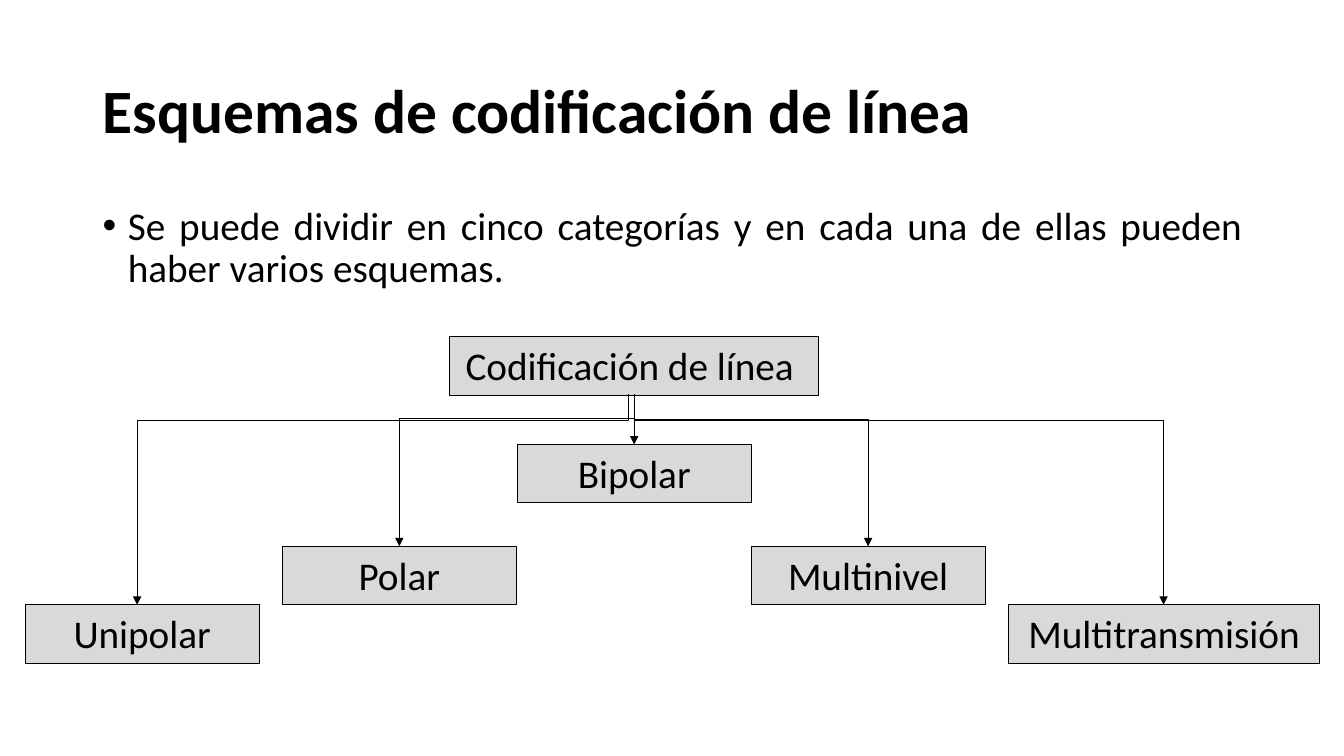
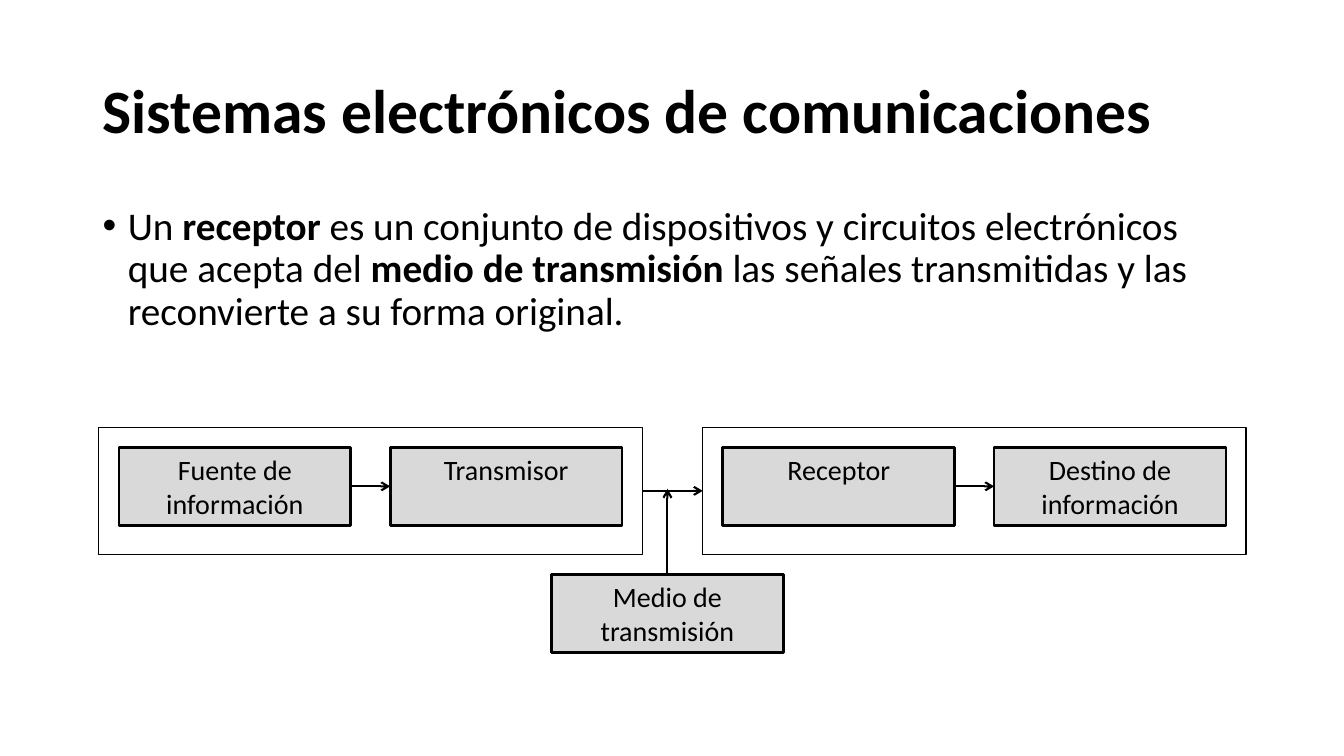
from lxml import etree
from pptx import Presentation
from pptx import util as u
from pptx.dml import color
from pptx.enum import shapes, text
from pptx.oxml import ns

COLORS = {"ink": "000000", "box": "D9D9D9"}
FONT = "Calibri"
TITLE_BOX = (0.92, 0.4, 11.5, 1.45)
TITLE_FORMAT = {"size": u.Pt(44), "bold": True}
BODY_FORMAT = {"size": u.Pt(28)}
PARAGRAPH_FORMAT = {"line_spacing": 0.9, "space_before": u.Pt(0)}
TOP, LEFT, BOTTOM, RIGHT = range(4)


def rgb(name):
    return color.RGBColor.from_string(COLORS[name])


def set_attributes(target, values):
    for name, value in values.items():
        setattr(target, name, value)


def add_run(paragraph, words, values):
    run = paragraph.add_run()
    run.text = words
    set_attributes(run.font, {"name": FONT, **values})
    run.font.color.rgb = rgb("ink")


def add_text(slide, box, anchor):
    shape = slide.shapes.add_textbox(*map(u.Inches, box))
    set_attributes(shape.text_frame, {"word_wrap": True, "vertical_anchor": anchor})
    paragraph = shape.text_frame.paragraphs[0]
    set_attributes(paragraph, PARAGRAPH_FORMAT)
    return paragraph


def add_title(slide, words):
    paragraph = add_text(slide, TITLE_BOX, text.MSO_ANCHOR.MIDDLE)
    add_run(paragraph, words, TITLE_FORMAT)


def add_bullet(slide, box, parts, alignment):
    paragraph = add_text(slide, box, text.MSO_ANCHOR.TOP)
    paragraph.alignment = alignment
    properties = paragraph._p.get_or_add_pPr()
    properties.set("marL", str(u.Inches(0.25)))
    properties.set("indent", str(u.Inches(-0.25)))
    etree.SubElement(properties, ns.qn("a:buFont")).set("typeface", "Arial")
    etree.SubElement(properties, ns.qn("a:buChar")).set("char", "•")
    for words, bold in parts:
        add_run(paragraph, words, {**BODY_FORMAT, "bold": bold})


def add_rectangle(slide, box, line_width):
    shape = slide.shapes.add_shape(shapes.MSO_SHAPE.RECTANGLE, *map(u.Inches, box))
    shape.shadow.inherit = False
    shape.fill.background()
    shape.line.color.rgb = rgb("ink")
    shape.line.width = u.Pt(line_width)
    return shape


def add_label(slide, box, words, size, line_width, wrap):
    shape = add_rectangle(slide, box, line_width)
    shape.fill.solid()
    shape.fill.fore_color.rgb = rgb("box")
    set_attributes(shape.text_frame, {"word_wrap": wrap, "vertical_anchor": text.MSO_ANCHOR.TOP})
    paragraph = shape.text_frame.paragraphs[0]
    paragraph.alignment = text.PP_ALIGN.CENTER
    add_run(paragraph, words, {"size": u.Pt(size)})
    return shape


def add_arrow(slide, kind, ends, line_width, head):
    connector = slide.shapes.add_connector(kind, *map(u.Inches, ends))
    connector.line.color.rgb = rgb("ink")
    connector.line.width = u.Pt(line_width)
    line = connector.line._get_or_add_ln()
    etree.SubElement(line, ns.qn("a:tailEnd")).set("type", head)
    etree.SubElement(connector._element.spPr, ns.qn("a:effectLst"))
    return connector


def join(slide, source, source_side, target, target_side, line_width, head):
    connector = add_arrow(slide, shapes.MSO_CONNECTOR.STRAIGHT, (0, 0, 0, 0), line_width, head)
    connector.begin_connect(source, source_side)
    connector.end_connect(target, target_side)
    return connector


def add_branch(slide, start, end, drop):
    (x1, y1), (x2, y2) = start, end
    length, spread = y2 - y1, abs(x2 - x1)
    left = (x1 + x2 - length) / 2
    top = (y1 + y2 - spread) / 2
    to_right = x2 > x1
    near, far = (left + length, left) if to_right else (left, left + length)
    ends = (near, top, far, top + spread)
    connector = add_arrow(slide, shapes.MSO_CONNECTOR.ELBOW, ends, 0.5, "triangle")
    properties = connector._element.spPr
    properties.find(ns.qn("a:xfrm")).set("rot", str((270 if to_right else 90) * 60000))
    adjustments = properties.find(ns.qn("a:prstGeom")).find(ns.qn("a:avLst"))
    guide = etree.SubElement(adjustments, ns.qn("a:gd"))
    guide.set("name", "adj1")
    guide.set("fmla", f"val {round(drop / length * 100000)}")


def add_category_tree(slide, left, top):
    def label(x, y, width, words):
        return add_label(slide, (left + x, top + y, width, 0.58), words, 28, 0.75, False)

    root = label(4.21, 0, 3.66, "Codificación de línea ")
    bipolar = label(4.88, 1.07, 2.32, "Bipolar")
    join(slide, root, BOTTOM, bipolar, TOP, 0.5, "triangle")
    branches = [
        ("Unipolar", 0, 2.66, 2.32, 5.98, 1.11, 0.26),
        ("Polar", 2.55, 2.08, 2.32, 6.04, 3.71, 0.24),
        ("Multinivel", 7.2, 2.08, 2.32, 6.04, 8.36, 0.25),
        ("Multitransmisión", 9.75, 2.66, 3.09, 6.04, 11.29, 0.26),
    ]
    for words, x, y, width, start, end, drop in branches:
        label(x, y, width, words)
        add_branch(slide, (left + start, top + 0.57), (left + end, top + y), drop)


def add_communication_diagram(slide, left, top):
    def label(x, y, words):
        return add_label(slide, (left + x, top + y, 2.3, 0.77), words, 20, 2, True)

    sides = [("Fuente de información", "Transmisor"), ("Receptor", "Destino de información")]
    frames = []
    for index, names in enumerate(sides):
        x = index * 5.99
        frames.append(add_rectangle(slide, (left + x, top, 5.39, 1.26), 1))
        first, second = [label(x + 0.2 + place * 2.69, 0.2, words) for place, words in enumerate(names)]
        join(slide, first, RIGHT, second, LEFT, 1.5, "arrow")
    join(slide, frames[0], RIGHT, frames[1], LEFT, 1.5, "arrow")
    medium = label(4.49, 1.46, "Medio de transmisión")
    middle = left + 5.64
    ends = (middle, top + 1.46, middle, top + 0.61)
    arrow = add_arrow(slide, shapes.MSO_CONNECTOR.STRAIGHT, ends, 1.5, "arrow")
    arrow.begin_connect(medium, TOP)


def build_schemes_slide(slide):
    add_title(slide, "Esquemas de codificación de línea")
    sentence = "Se puede dividir en cinco categorías y en cada una de ellas pueden haber varios esquemas."
    add_bullet(slide, (0.92, 2, 11.5, 0.95), [(sentence, False)], text.PP_ALIGN.JUSTIFY)
    add_category_tree(slide, 0.25, 3.34)


def build_systems_slide(slide):
    add_title(slide, "Sistemas electrónicos de comunicaciones")
    parts = [
        ("Un ", False),
        ("receptor", True),
        (" es un conjunto de dispositivos y circuitos electrónicos que acepta del ", False),
        ("medio de transmisión", True),
        (" las señales transmitidas y las reconvierte a su forma original.", False),
    ]
    add_bullet(slide, (0.92, 2, 11.5, 1.45), parts, text.PP_ALIGN.LEFT)
    add_communication_diagram(slide, 0.98, 4.24)


def main():
    presentation = Presentation()
    presentation.slide_width = u.Inches(13.33)
    presentation.slide_height = u.Inches(7.5)
    for build in (build_schemes_slide, build_systems_slide):
        build(presentation.slides.add_slide(presentation.slide_layouts[6]))
    presentation.save("out.pptx")


if __name__ == "__main__":
    main()
